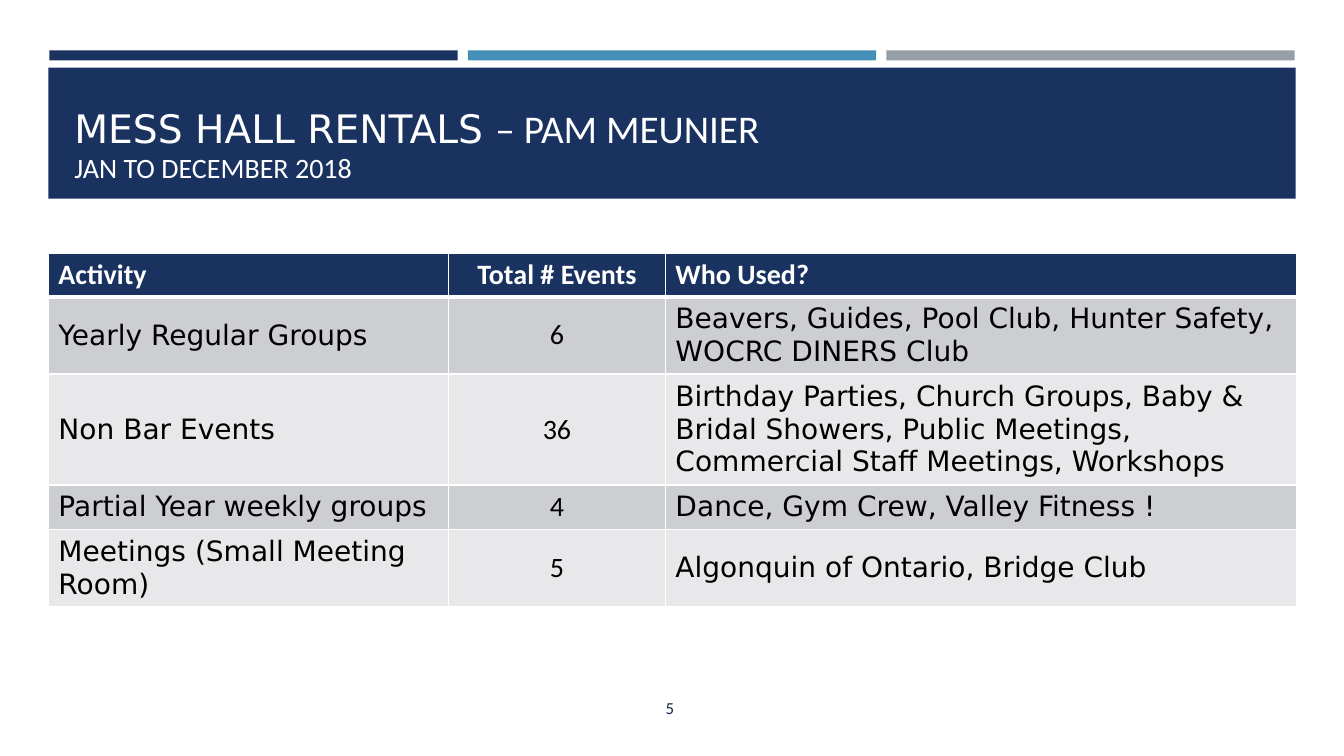
import pptx
import pptx.util
import pptx.dml.color
import pptx.enum.shapes
import pptx.enum.text
import pptx.oxml
import pptx.oxml.ns

Inches, Pt = pptx.util.Inches, pptx.util.Pt
ALIGN, ANCHOR = pptx.enum.text.PP_ALIGN, pptx.enum.text.MSO_ANCHOR
RECT = pptx.enum.shapes.MSO_SHAPE.RECTANGLE
RGB = pptx.dml.color.RGBColor.from_string
COLORS = {"navy": "1A3260", "blue": "4590B8", "gray": "969FA7", "white": "FFFFFF",
          "black": "000000", "number": "142648", "dark": "CDCED2", "light": "E8E8EA"}
SANS, WIDE = "Calibri", "DejaVu Sans"


def write(para, text, size=20, font=SANS, color="white", bold=False, align=ALIGN.LEFT):
    """Add one formatted run to a paragraph."""
    para.alignment = align
    run = para.add_run()
    run.text = text
    run.font.size, run.font.name, run.font.bold = Pt(size), font, bold
    run.font.color.rgb = RGB(COLORS[color])


def edge(cell, side, width):
    """Draw a white border on one side of a cell: L, R, T or B."""
    line = pptx.oxml.parse_xml(
        f'<a:ln{side} {pptx.oxml.ns.nsdecls("a")} w="{Pt(width)}"><a:solidFill>'
        f'<a:srgbClr val="{COLORS["white"]}"/></a:solidFill></a:ln{side}>')
    props = cell._tc.get_or_add_tcPr()
    props.insert("LRTB".index(side), line)


deck = pptx.Presentation()
deck.slide_width, deck.slide_height = Inches(13.33), Inches(7.5)
slide = deck.slides.add_slide(deck.slide_layouts[6])

# Three strips above the title band
bars = [(0.49 + 4.15 * i, 0.5, 4.05, 0.1, name)
        for i, name in enumerate(["navy", "blue", "gray"])]
for left, top, width, height, name in bars + [(0.48, 0.67, 12.37, 1.3, "navy")]:
    bar = slide.shapes.add_shape(RECT, Inches(left), Inches(top), Inches(width), Inches(height))
    bar.shadow.inherit = False
    bar.fill.solid()
    bar.fill.fore_color.rgb = RGB(COLORS[name])
    bar.line.fill.background()

# Title
title = slide.shapes.add_textbox(Inches(0.64), Inches(0.77), Inches(12.06), Inches(1.11)).text_frame
title.word_wrap = True
title.vertical_anchor = ANCHOR.BOTTOM
para = title.paragraphs[0]
write(para, "MESS HALL RENTALS ", size=28, font=WIDE)
write(para, "– PAM MEUNIER", size=28)
para.add_line_break()
write(para, "JAN TO DECEMBER 2018")

# Rentals table
rows = [
    ("Activity", "Total # Events", "Who Used?"),
    ("Yearly Regular Groups", "6", "Beavers, Guides, Pool Club, Hunter Safety, WOCRC DINERS Club"),
    ("Non Bar Events", "36", "Birthday Parties, Church Groups, Baby & Bridal Showers, "
     "Public Meetings, Commercial Staff Meetings, Workshops"),
    ("Partial Year weekly groups", "4", "Dance, Gym Crew, Valley Fitness !"),
    ("Meetings (Small Meeting Room)", "5", "Algonquin of Ontario, Bridge Club"),
]
widths = [3.97, 2.15, 6.26]
heights = [0.43, 0.75, 1.07, 0.44, 0.75]
table = slide.shapes.add_table(len(rows), len(widths), Inches(0.48), Inches(2.51),
                               Inches(sum(widths)), Inches(sum(heights))).table
for col, width in zip(table.columns, widths):
    col.width = Inches(width)
for r, row in enumerate(rows):
    table.rows[r].height = Inches(heights[r])
    head = r == 0
    for c, text in enumerate(row):
        cell = table.cell(r, c)
        cell.fill.solid()
        fill = "navy" if head else "dark" if r % 2 else "light"
        cell.fill.fore_color.rgb = RGB(COLORS[fill])
        cell.vertical_anchor = ANCHOR.TOP if head else ANCHOR.MIDDLE
        for side in "LRTB":
            thick = (head and side == "B") or (r == 1 and side == "T")
            edge(cell, side, 3 if thick else 1)
        write(cell.text_frame.paragraphs[0], text, bold=head,
              font=SANS if head or c == 1 else WIDE,
              color="white" if head else "black",
              align=ALIGN.CENTER if c == 1 else ALIGN.LEFT)

# Page number
page = slide.shapes.add_textbox(Inches(5.09), Inches(6.82), Inches(3.11), Inches(0.4)).text_frame
page.word_wrap = True
page.vertical_anchor = ANCHOR.MIDDLE
write(page.paragraphs[0], "5", size=12, color="number", align=ALIGN.CENTER)

deck.save("out.pptx")
